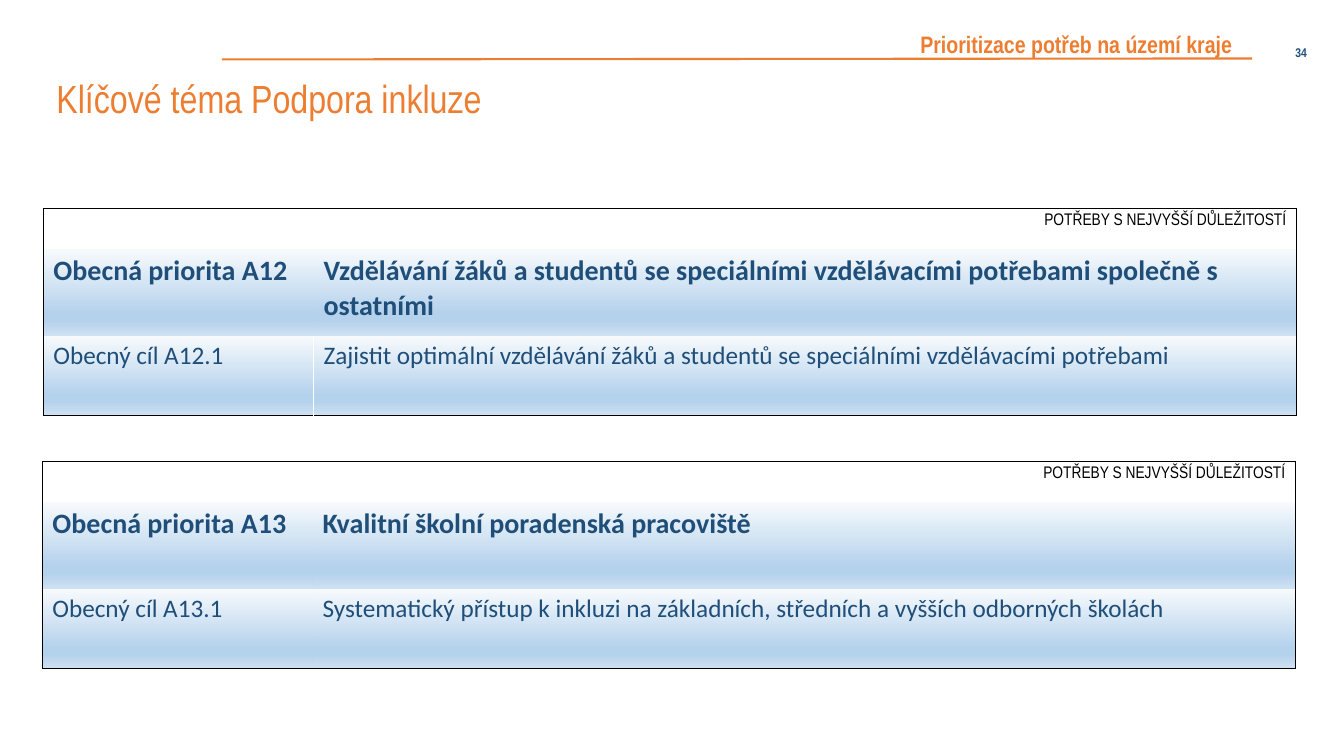
from lxml import etree
from pptx import Presentation
from pptx.dml.color import RGBColor
from pptx.enum.shapes import MSO_CONNECTOR
from pptx.enum.text import MSO_ANCHOR, PP_ALIGN
from pptx.oxml.ns import qn
from pptx.util import Inches, Pt

STRAIGHT = MSO_CONNECTOR.STRAIGHT
MIDDLE, BOTTOM = MSO_ANCHOR.MIDDLE, MSO_ANCHOR.BOTTOM
LEFT, RIGHT = PP_ALIGN.LEFT, PP_ALIGN.RIGHT
ORANGE, NAVY, BLACK, WHITE = "ED7D31", "1F4E79", "000000", "FFFFFF"
NARROW, BODY = "Arial Narrow", "Calibri"
GRADIENT = [(0, "F7FAFD"), (74, "B5D2EC"), (83, "B5D2EC"), (100, "CEE1F2")]
COLUMNS = [2.68, 9.75]
ROWS = [0.4, 0.86, 0.79]
CAPTION = "POTŘEBY S NEJVYŠŠÍ DŮLEŽITOSTÍ"


def colour(value):
    return RGBColor.from_string(value)


def write(frame, text, size, font, value, bold=False, align=LEFT):
    frame.text = text
    para = frame.paragraphs[0]
    para.alignment = align
    for span in para.runs:
        span.font.size = Pt(size)
        span.font.name = font
        span.font.bold = bold
        span.font.color.rgb = colour(value)
    return para


def add_text(page, box, text, size, value, anchor, align=LEFT):
    shape = page.shapes.add_textbox(*map(Inches, box))
    frame = shape.text_frame
    frame.word_wrap = True
    frame.vertical_anchor = anchor
    return write(frame, text, size, NARROW, value, True, align)


def add_colour(parent, value):
    etree.SubElement(parent, qn("a:srgbClr"), val=value)


def set_borders(cell, borders):
    """Draw the named sides (L, R, T, B) and hide the others."""
    properties = cell._tc.get_or_add_tcPr()
    for side in "LRTB":
        line = etree.SubElement(properties, qn("a:ln" + side), w=str(Pt(1)))
        if side in borders:
            add_colour(etree.SubElement(line, qn("a:solidFill")), borders[side])
        else:
            etree.SubElement(line, qn("a:noFill"))


def set_gradient(cell):
    properties = cell._tc.get_or_add_tcPr()
    fill = etree.SubElement(properties, qn("a:gradFill"), rotWithShape="1")
    stops = etree.SubElement(fill, qn("a:gsLst"))
    for position, value in GRADIENT:
        add_colour(etree.SubElement(stops, qn("a:gs"), pos=str(position * 1000)), value)
    etree.SubElement(fill, qn("a:lin"), ang="5400000", scaled="0")


def add_header(page, left, top, right):
    # Orange rule, section name above it and page number beside it
    rule = page.shapes.add_connector(
        STRAIGHT, Inches(left), Inches(top + 0.01), Inches(right), Inches(top))
    rule.line.color.rgb = colour(ORANGE)
    rule.line.width = Pt(1.5)
    etree.SubElement(rule._element.spPr, qn("a:effectLst"))
    section = add_text(page, (right - 3.39, top - 0.26, 3.38, 0.31),
                       "Prioritizace potřeb na území kraje", 17, ORANGE, BOTTOM)
    section.line_spacing = 0.9
    add_text(page, (right - 0.15, top - 0.26, 0.79, 0.4), "34", 9, NAVY, MIDDLE, RIGHT)


def add_title(page, left, top, width, height):
    title = page.shapes.title
    title.left, title.top = Inches(left), Inches(top)
    title.width, title.height = Inches(width), Inches(height)
    title.text_frame.vertical_anchor = MIDDLE
    para = write(title.text_frame, "Klíčové téma Podpora inkluze", 28, NARROW, ORANGE)
    para.line_spacing = 0.9


def add_priority_table(page, left, top, priority, goal, divided=False):
    frame = page.shapes.add_table(
        len(ROWS), len(COLUMNS), Inches(left), Inches(top),
        Inches(sum(COLUMNS)), Inches(sum(ROWS)))
    table = frame.table
    table.first_row = table.horz_banding = False
    for column, width in zip(table.columns, COLUMNS):
        column.width = Inches(width)
    for row, height in zip(table.rows, ROWS):
        row.height = Inches(height)

    # Outer frame, with an optional white divider in the goal row
    last = len(ROWS) - 1
    for r in range(len(ROWS)):
        for c, outer in enumerate("LR"):
            borders = {outer: BLACK}
            if r == 0:
                borders["T"] = BLACK
            if r == last:
                borders["B"] = BLACK
                if divided:
                    borders["RL"[c]] = WHITE
            cell = table.cell(r, c)
            set_borders(cell, borders)
            if r:
                set_gradient(cell)
            else:
                cell.fill.background()

    # Caption, then the priority and its goal
    write(table.cell(0, 1).text_frame, CAPTION, 12, NARROW, BLACK, align=RIGHT)
    for r, texts, size, bold in ((1, priority, 20, True), (2, goal, 18, False)):
        for c, text in enumerate(texts):
            write(table.cell(r, c).text_frame, text, size, BODY, NAVY, bold)


def main():
    deck = Presentation()
    deck.slide_width, deck.slide_height = Inches(13.33), Inches(7.5)
    page = deck.slides.add_slide(deck.slide_layouts[5])
    add_header(page, 2.2, 0.58, 12.42)
    add_title(page, 0.46, 0.69, 12.87, 0.62)
    add_priority_table(
        page, 0.43, 2.07,
        ("Obecná priorita A12",
         "Vzdělávání žáků a studentů se speciálními vzdělávacími potřebami společně s ostatními"),
        ("Obecný cíl A12.1",
         "Zajistit optimální vzdělávání žáků a studentů se speciálními vzdělávacími potřebami"),
        divided=True)
    add_priority_table(
        page, 0.42, 4.58,
        ("Obecná priorita A13", "Kvalitní školní poradenská pracoviště"),
        ("Obecný cíl A13.1",
         "Systematický přístup k inkluzi na základních, středních a vyšších odborných školách"))
    deck.save("out.pptx")


if __name__ == "__main__":
    main()
